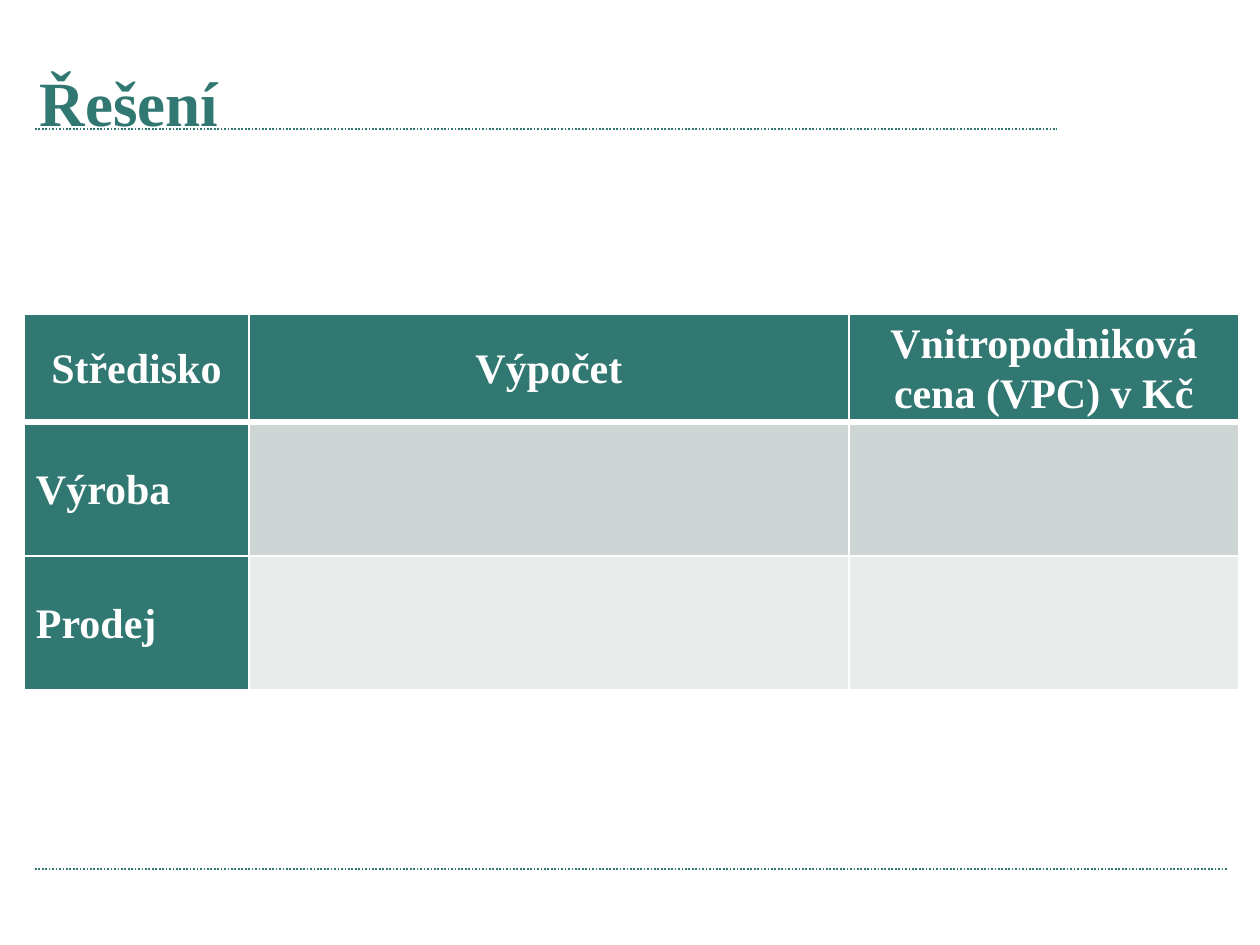
from lxml.etree import SubElement
from pptx import Presentation
from pptx.dml.color import RGBColor
from pptx.enum.dml import MSO_LINE
from pptx.enum.shapes import MSO_CONNECTOR
from pptx.enum.text import MSO_ANCHOR, PP_ALIGN
from pptx.oxml import parse_xml
from pptx.oxml.ns import nsdecls, qn
from pptx.util import Pt

FONT = "Times New Roman"
TEAL, WHITE = "307871", "FFFFFF"
BANDS = ["CDD6D5", "E8ECEB"]
COLS = [225, 600, 390]
ROWS = [105, 134, 134]
HEADS = ["Středisko", "Výpočet", "Vnitropodniková cena (VPC) v Kč"]
UNITS = ["Výroba", "Prodej"]


def px(count):
    """Turn pixels into EMU."""
    return round(count * 914400 / 168)


def color(code):
    """Turn a hex string into a colour."""
    return RGBColor.from_string(code)


def write(para, text, size, code):
    """Add one bold run to a paragraph."""
    run = para.add_run()
    run.text = text
    font = run.font
    font.name, font.size, font.bold = FONT, Pt(size), True
    font.color.rgb = color(code)


def rule(slide, left, top, width):
    """Draw a dotted level line."""
    line = slide.shapes.add_connector(
        MSO_CONNECTOR.STRAIGHT, px(left), px(top), px(left + width), px(top))
    line.line.color.rgb = color(TEAL)
    line.line.width = Pt(0.75)
    line.line.dash_style = MSO_LINE.ROUND_DOT
    SubElement(line._element.spPr, qn("a:effectLst"))


def title(slide, left, top, width, height):
    """Place the heading in its box."""
    frame = slide.shapes.add_textbox(
        px(left), px(top), px(width), px(height)).text_frame
    frame.word_wrap = True
    frame.vertical_anchor = MSO_ANCHOR.MIDDLE
    frame.margin_left = frame.margin_right = px(16)
    frame.margin_top, frame.margin_bottom = px(14), px(8)
    write(frame.paragraphs[0], "Řešení", 27, TEAL)


def border(cell, top, bottom):
    """Give a cell white borders, with top and bottom widths in points."""
    props = cell._tc.get_or_add_tcPr()
    sides = {"lnL": 1, "lnR": 1, "lnT": top, "lnB": bottom}
    for place, (side, width) in enumerate(sides.items()):
        props.insert(place, parse_xml(
            f'<a:{side} {nsdecls("a")} w="{Pt(width)}"><a:solidFill>'
            f'<a:srgbClr val="{WHITE}"/></a:solidFill></a:{side}>'))


def label(cell, text, align):
    """Write white text in a cell."""
    para = cell.text_frame.paragraphs[0]
    para.alignment, para.line_spacing = align, 1.07
    write(para, text, 18, WHITE)


def grid(slide, left, top):
    """Place the price table."""
    table = slide.shapes.add_table(
        len(ROWS), len(COLS), px(left), px(top),
        px(sum(COLS)), px(sum(ROWS))).table
    for col, width in zip(table.columns, COLS):
        col.width = px(width)
    for row, height in zip(table.rows, ROWS):
        row.height = px(height)
    for y in range(len(ROWS)):
        for x in range(len(COLS)):
            cell = table.cell(y, x)
            cell.vertical_anchor = MSO_ANCHOR.MIDDLE
            cell.margin_left = cell.margin_right = px(12)
            cell.margin_top = cell.margin_bottom = 0
            cell.fill.solid()
            head = y == 0 or x == 0
            cell.fill.fore_color.rgb = color(TEAL if head else BANDS[y - 1])
            border(cell, 3 if y == 1 else 1, 3 if y == 0 else 1)
    for x, text in enumerate(HEADS):
        label(table.cell(0, x), text, PP_ALIGN.CENTER)
    for y, text in enumerate(UNITS, 1):
        label(table.cell(y, 0), text, PP_ALIGN.JUSTIFY)


def main():
    """Build and save the slide."""
    deck = Presentation()
    deck.slide_width, deck.slide_height = px(1260), px(945)
    slide = deck.slides.add_slide(deck.slide_layouts[6])
    rule(slide, 35, 129, 1022)
    rule(slide, 35, 869, 1192)
    title(slide, 24, 49, 1110, 99)
    grid(slide, 24, 314)
    deck.save("out.pptx")


if __name__ == "__main__":
    main()
